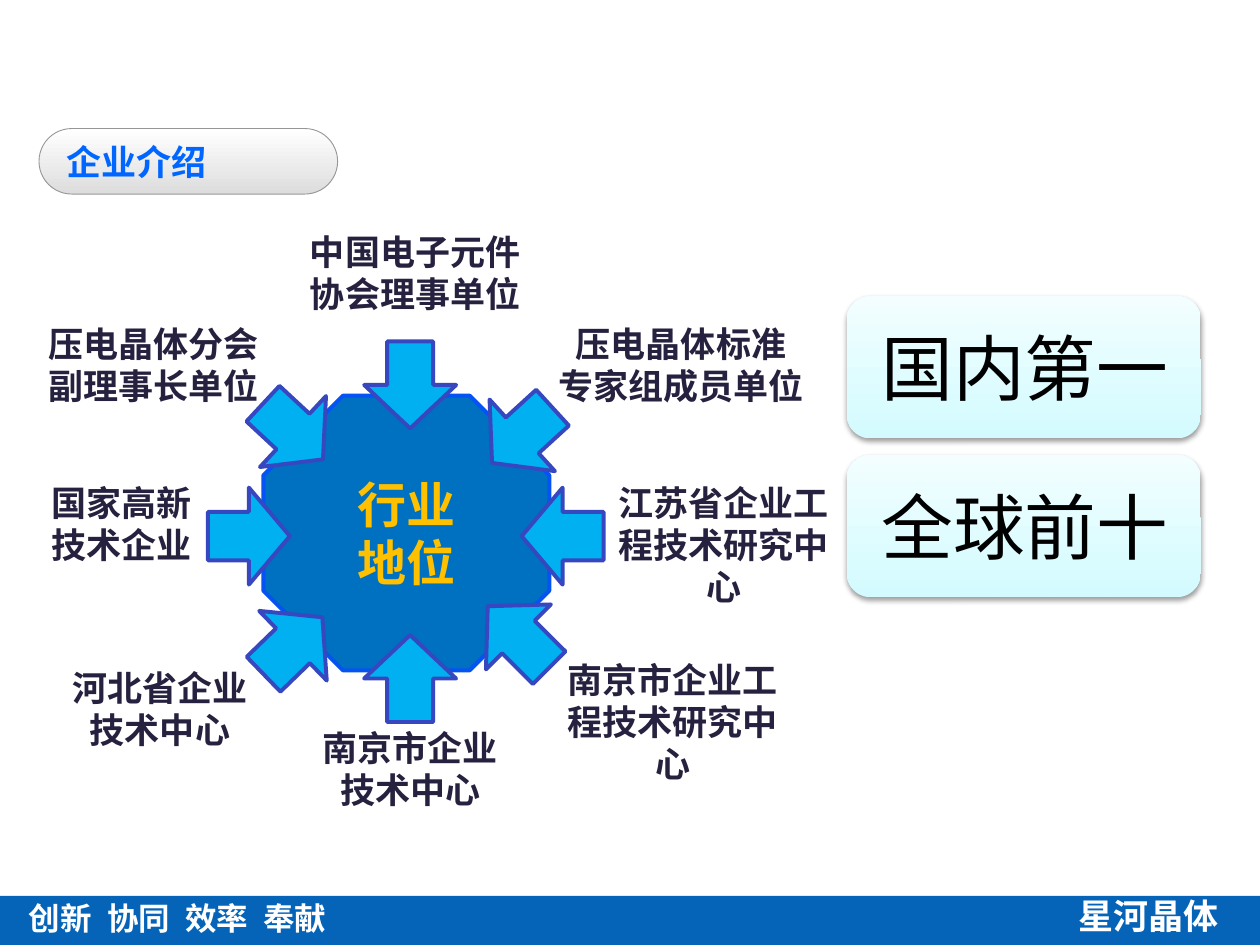
"""Build the company introduction slide on industry standing."""
from lxml.etree import SubElement
from pptx import Presentation
from pptx.dml.color import RGBColor
from pptx.enum.shapes import MSO_SHAPE as SHAPE
from pptx.enum.text import MSO_ANCHOR as ANCHOR, PP_ALIGN as ALIGN
from pptx.oxml import parse_xml
from pptx.oxml.ns import nsdecls, qn
from pptx.util import Inches, Pt

FONT = "Noto Sans CJK SC"
WHITE = RGBColor(0xFF, 0xFF, 0xFF)
BLACK = RGBColor(0x00, 0x00, 0x00)
SILVER = RGBColor(0xDD, 0xDD, 0xDD)
GRAY = RGBColor(0x96, 0x96, 0x96)
FOOTER_BLUE = RGBColor(0x05, 0x63, 0xB8)
TITLE_BLUE = RGBColor(0x00, 0x66, 0xFF)
CARD_BOTTOM = RGBColor(0xD3, 0xFB, 0xFF)
CARD_TOP = RGBColor(0xF2, 0xFE, 0xFF)
CORE_BLUE = RGBColor(0x00, 0x70, 0xC0)
CORE_EDGE = RGBColor(0x04, 0x53, 0xF2)
GOLD = RGBColor(0xFF, 0xC0, 0x00)
ARROW_BLUE = RGBColor(0x00, 0xB0, 0xF0)
ARROW_EDGE = RGBColor(0x37, 0x47, 0xBF)
INK = RGBColor(0x25, 0x21, 0x3F)

LABELS = [
    ("中国电子元件\n协会理事单位", 2.09, 1.78, 2.41, 0.77),
    ("压电晶体分会\n副理事长单位", 0.23, 2.51, 1.98, 0.77),
    ("压电晶体标准\n专家组成员单位", 4.33, 2.51, 2.15, 0.77),
    ("国家高新\n技术企业", 0.16, 3.77, 1.61, 0.77),
    ("江苏省企业工程技术研究中心", 4.72, 3.77, 2.05, 1.11),
    ("河北省企业\n技术中心", 0.23, 5.24, 2.08, 0.77),
    ("南京市企业\n技术中心", 2.45, 5.72, 1.61, 0.77),
    ("南京市企业工程技术研究中心", 4.28, 5.18, 2.12, 1.11),
]
TALL_ARROW = (0.73, 0.69)
WIDE_ARROW = (0.77, 0.65)
ARROWS = [
    (2.89, 2.71, TALL_ARROW, 180),
    (1.94, 3.1, WIDE_ARROW, 132.9),
    (1.59, 3.93, WIDE_ARROW, 90),
    (1.94, 4.8, WIDE_ARROW, 45.9),
    (2.89, 5.04, TALL_ARROW, 0),
    (3.75, 4.71, TALL_ARROW, 315),
    (4.08, 3.93, WIDE_ARROW, 270),
    (3.76, 3.13, WIDE_ARROW, 227.6),
]


def write(shape, text, size, color, bold=True, align=ALIGN.LEFT,
          anchor=ANCHOR.MIDDLE, tabs=()):
    """Write one paragraph per line of text into a shape."""
    frame = shape.text_frame
    frame.word_wrap = True
    frame.vertical_anchor = anchor
    for index, line in enumerate(text.split("\n")):
        paragraph = frame.add_paragraph() if index else frame.paragraphs[0]
        paragraph.alignment = align
        paragraph.line_spacing = Pt(size * 1.2)
        if tabs:
            properties = paragraph._p.get_or_add_pPr()
            tab_list = SubElement(properties, qn("a:tabLst"))
            for position in tabs:
                SubElement(tab_list, qn("a:tab"), pos=str(Inches(position)), algn="l")
        run = paragraph.add_run()
        run.text = line
        font = run.font
        font.name, font.size, font.bold = FONT, Pt(size), bold
        font.color.rgb = color
        SubElement(run._r.get_or_add_rPr(), qn("a:ea"), typeface=FONT)


def add_box(slide, kind, left, top, width, height, fill, edge=None, weight=2.25):
    """Add a preset shape with a solid fill or a (start, end, angle) gradient."""
    shape = slide.shapes.add_shape(
        kind, Inches(left), Inches(top), Inches(width), Inches(height))
    shape.shadow.inherit = False
    if isinstance(fill, RGBColor):
        shape.fill.solid()
        shape.fill.fore_color.rgb = fill
    else:
        start, end, angle = fill
        shape.fill.gradient()
        shape.fill.gradient_angle = angle
        for stop, color, position in zip(shape.fill.gradient_stops, (start, end), (0, 1)):
            stop.color.rgb = color
            stop.position = position
    if edge is None:
        shape.line.fill.background()
    else:
        shape.line.color.rgb = edge
        shape.line.width = Pt(weight)
    return shape


def add_text(slide, text, left, top, width, height, size, color, **style):
    """Add a wrapped text box."""
    box = slide.shapes.add_textbox(
        Inches(left), Inches(top), Inches(width), Inches(height))
    write(box, text, size, color, **style)
    return box


def add_footer(slide):
    """Add the footer band with the values and the company name."""
    add_box(slide, SHAPE.RECTANGLE, 0, 7.11, 10, 0.39, FOOTER_BLUE)
    values = add_text(slide, "创新\t协同\t效率\t奉献", 0.15, 7.09, 3.61, 0.39, 18, WHITE,
                      tabs=[0.62 * step for step in (1, 2, 3)])
    values.text_frame.margin_left = Inches(0.08)
    add_text(slide, "星河晶体", 8.46, 7.05, 1.42, 0.44, 20, WHITE, anchor=ANCHOR.TOP)


def add_title(slide, text):
    """Place the title on a silver pill."""
    place = (0.31, 1.02, 2.37, 0.52)
    pill = add_box(slide, SHAPE.ROUNDED_RECTANGLE, *place, (WHITE, SILVER, 270), GRAY, 0.5)
    pill.adjustments[0] = 0.5
    title = slide.shapes.title
    title.left, title.top, title.width, title.height = map(Inches, place)
    title.text_frame.margin_left = Inches(0.22)
    write(title, text, 20, TITLE_BLUE)
    pill.element.addnext(title.element)


def add_card(slide, text, top):
    """Add a pale rounded card with a soft shadow."""
    card = add_box(slide, SHAPE.ROUNDED_RECTANGLE, 6.72, top, 2.81, 1.13,
                   (CARD_BOTTOM, CARD_TOP, 90))
    card.element.spPr.find(qn("a:effectLst")).append(parse_xml(
        f'<a:outerShdw {nsdecls("a")} blurRad="{Pt(3.1)}" dist="{Pt(1.6)}" '
        'dir="5400000" rotWithShape="0"><a:srgbClr val="000000">'
        '<a:alpha val="38000"/></a:srgbClr></a:outerShdw>'))
    card.text_frame.margin_left = Inches(0.22)
    write(card, text, 41, BLACK, bold=False)


def add_standing(slide):
    """Add the octagon with its labels and inward arrows."""
    core = add_box(slide, SHAPE.OCTAGON, 2.09, 3.14, 2.27, 2.18, CORE_BLUE, CORE_EDGE)
    core.adjustments[0] = 0.29
    write(core, "行业\n地位", 28, GOLD, align=ALIGN.CENTER)
    for text, *place in LABELS:
        add_text(slide, text, *place, 20, INK, align=ALIGN.CENTER, anchor=ANCHOR.TOP)
    for left, top, size, rotation in ARROWS:
        arrow = add_box(slide, SHAPE.UP_ARROW, left, top, *size, ARROW_BLUE, ARROW_EDGE)
        arrow.rotation = rotation


def main():
    """Build and save the presentation."""
    presentation = Presentation()
    presentation.slide_width, presentation.slide_height = Inches(10), Inches(7.5)
    slide = presentation.slides.add_slide(presentation.slide_layouts[5])
    add_footer(slide)
    add_title(slide, "企业介绍")
    for index, text in enumerate(("国内第一", "全球前十")):
        add_card(slide, text, 2.35 + 1.26 * index)
    add_standing(slide)
    presentation.save("out.pptx")


if __name__ == "__main__":
    main()
